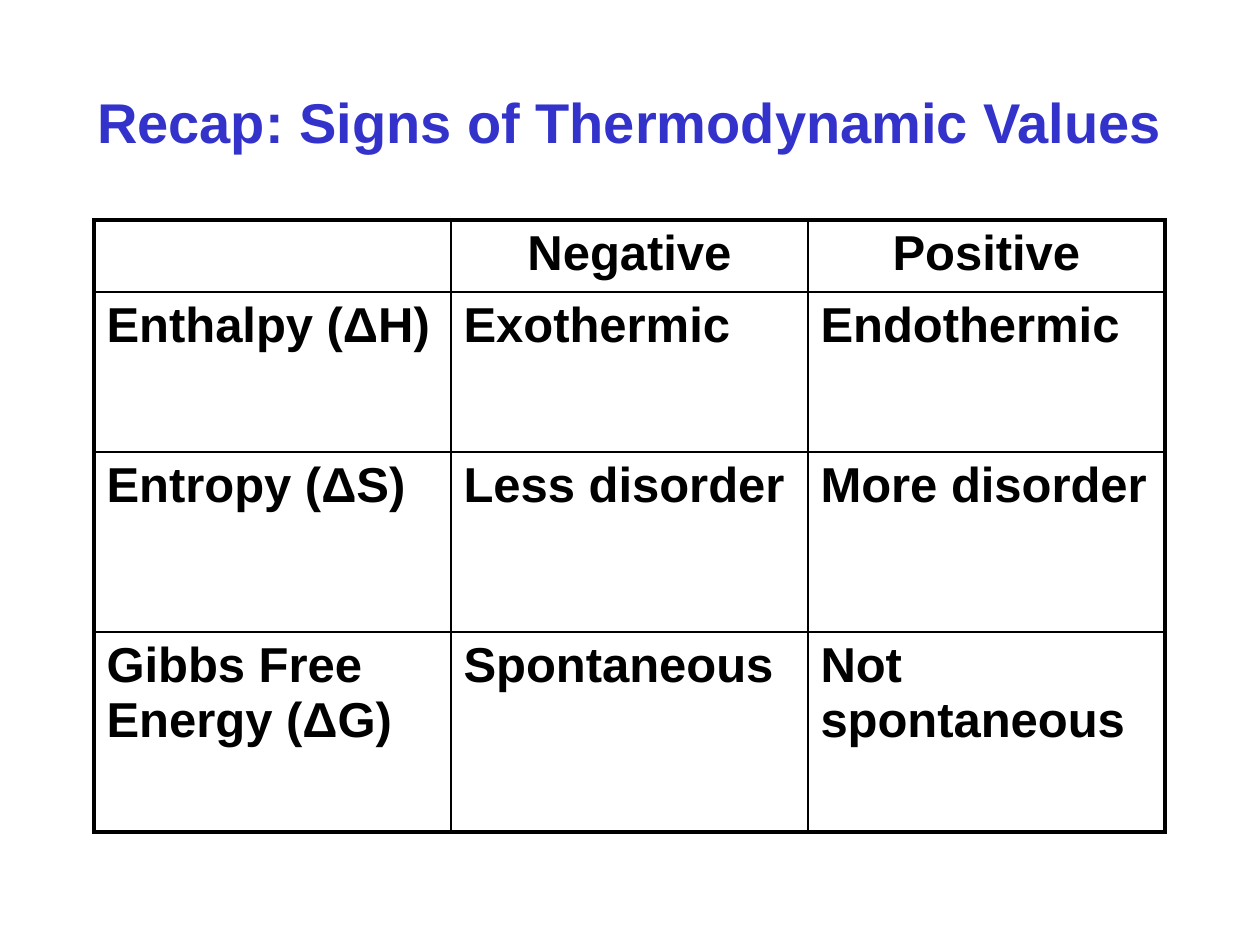
from lxml.etree import SubElement
from pptx import Presentation
from pptx.dml.color import RGBColor
from pptx.enum.text import MSO_ANCHOR, PP_ALIGN
from pptx.oxml.ns import qn
from pptx.util import Emu, Pt

# Content
TITLE = "Recap: Signs of Thermodynamic Values"
ROWS = [
    ("", "Negative", "Positive"),
    ("Enthalpy (ΔH)", "Exothermic", "Endothermic"),
    ("Entropy (ΔS)", "Less disorder", "More disorder"),
    ("Gibbs Free Energy (ΔG)", "Spontaneous", "Not spontaneous"),
]

# Layout in px, 126 to the inch
SLIDE_W, SLIDE_H = 1260, 945
TITLE_BOX = (63, 42, 1134, 158)
TABLE_X, TABLE_Y, COL_W = 94, 220, 357
ROW_H = (72, 160, 180, 200)
OUTER, INNER = 2.25, 1  # border widths in points

FONT = "Arial"
BLUE = RGBColor(0x33, 0x33, 0xCC)
BLACK = RGBColor(0, 0, 0)


def px(n):
    return Emu(round(n * 914400 / 126))


def write(tf, text, size=28, color=BLACK, align=PP_ALIGN.LEFT):
    tf.word_wrap = True
    p = tf.paragraphs[0]
    p.alignment = align
    r = p.add_run()
    r.text = text
    r.font.name, r.font.size, r.font.bold = FONT, Pt(size), True
    r.font.color.rgb = color


def set_borders(cell, widths):
    tcPr = cell._tc.get_or_add_tcPr()
    for side, width in widths.items():
        ln = SubElement(tcPr, qn(f"a:ln{side}"), w=str(Pt(width)))
        fill = SubElement(ln, qn("a:solidFill"))
        SubElement(fill, qn("a:srgbClr"), val=str(BLACK))


prs = Presentation()
prs.slide_width, prs.slide_height = px(SLIDE_W), px(SLIDE_H)
slide = prs.slides.add_slide(prs.slide_layouts[6])

# Title
tf = slide.shapes.add_textbox(*map(px, TITLE_BOX)).text_frame
tf.vertical_anchor = MSO_ANCHOR.MIDDLE
write(tf, TITLE, size=32, color=BLUE, align=PP_ALIGN.CENTER)

# Table
n_rows, n_cols = len(ROWS), len(ROWS[0])
table = slide.shapes.add_table(n_rows, n_cols, px(TABLE_X), px(TABLE_Y),
                               px(COL_W * n_cols), px(sum(ROW_H))).table
table.first_row = table.horz_banding = False
for col in table.columns:
    col.width = px(COL_W)
for row, height in zip(table.rows, ROW_H):
    row.height = px(height)

for i, texts in enumerate(ROWS):
    for j, text in enumerate(texts):
        cell = table.cell(i, j)
        if text:
            write(cell.text_frame, text,
                  align=PP_ALIGN.LEFT if i else PP_ALIGN.CENTER)
        # Heavy frame, thin inner lines; borders come before the fill
        set_borders(cell, {
            "L": OUTER if j == 0 else INNER,
            "R": OUTER if j == n_cols - 1 else INNER,
            "T": OUTER if i == 0 else INNER,
            "B": OUTER if i == n_rows - 1 else INNER,
        })
        cell.fill.background()

prs.save("out.pptx")
